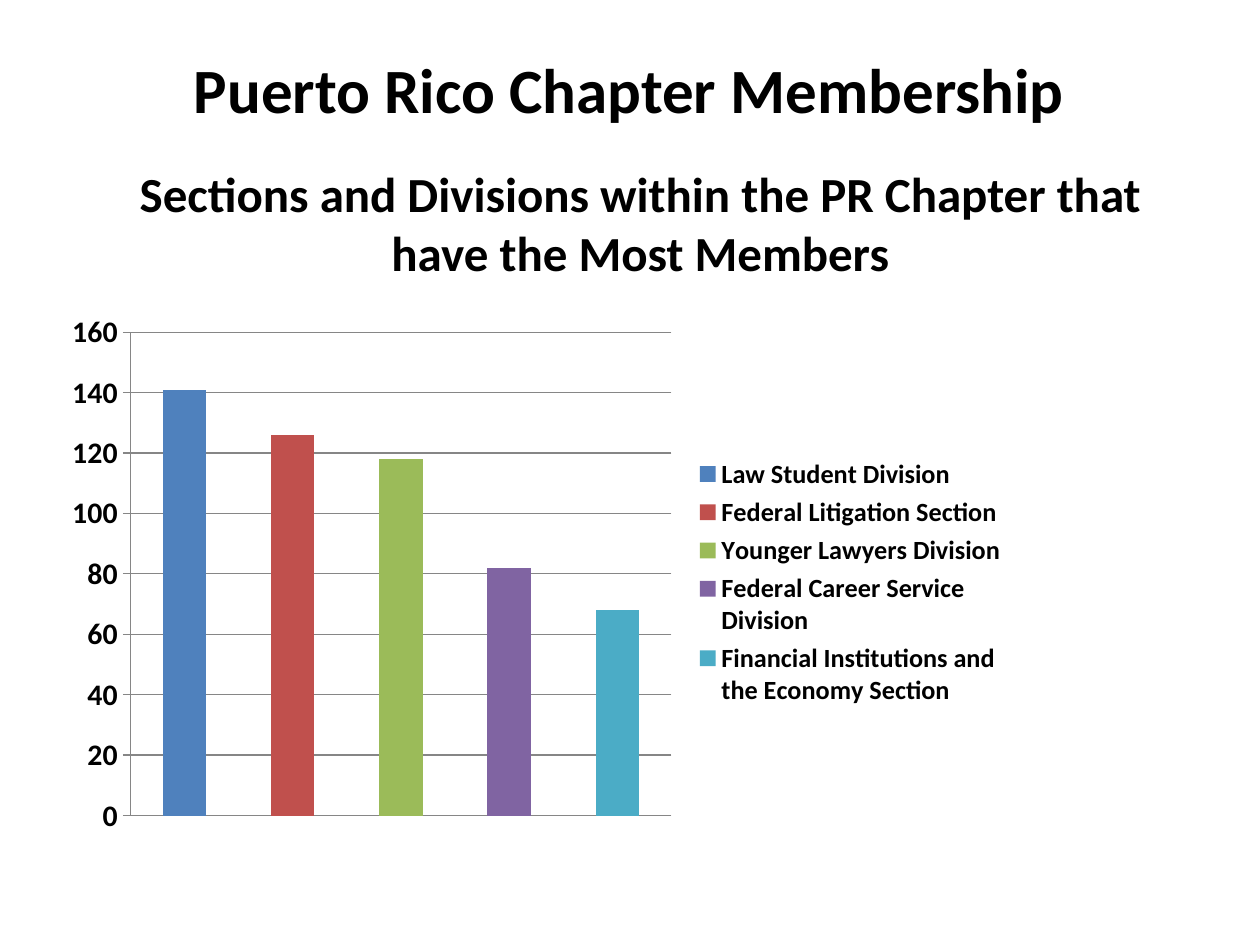
import lxml.etree
import pptx
import pptx.chart.data
import pptx.dml.color
import pptx.enum.chart
import pptx.enum.text
import pptx.util

Cm = pptx.util.Cm
CHART_NS = "http://schemas.openxmlformats.org/drawingml/2006/chart"
MEMBERS = {
    "Law Student Division": (141, "4F81BD"),
    "Federal Litigation Section": (126, "C0504D"),
    "Younger Lawyers Division": (118, "9BBB59"),
    "Federal Career Service Division": (82, "8064A2"),
    "Financial Institutions and the Economy Section": (68, "4BACC6"),
}


def color(hex_value):
    """Return the RGB colour for a hex string."""
    return pptx.dml.color.RGBColor.from_string(hex_value)


def apply(target, formats):
    """Set each attribute in the dict on the target."""
    for name, value in formats.items():
        setattr(target, name, value)


def format_font(font, size, bold):
    """Give a font the slide's typeface, colour, size and weight."""
    apply(font, {"name": "Calibri", "size": pptx.util.Pt(size), "bold": bold})
    font.color.rgb = color("000000")


def write_heading(heading, box, text, size):
    """Place a centred bold heading in its box."""
    apply(heading, dict(zip(("left", "top", "width", "height"), box)))
    apply(heading.text_frame, {
        "text": text,
        "word_wrap": True,
        "auto_size": pptx.enum.text.MSO_AUTO_SIZE.NONE,
        "vertical_anchor": pptx.enum.text.MSO_ANCHOR.TOP,
    })
    paragraph = heading.text_frame.paragraphs[0]
    paragraph.alignment = pptx.enum.text.PP_ALIGN.CENTER
    format_font(paragraph.runs[0].font, size, True)


def set_layout(parent, index, fractions, inner=False):
    """Fix a chart part at fractions of the chart area."""
    tag = f"{{{CHART_NS}}}"
    for old in parent.findall(tag + "layout"):
        parent.remove(old)
    layout = lxml.etree.Element(tag + "layout")
    manual = lxml.etree.SubElement(layout, tag + "manualLayout")
    settings = {"layoutTarget": "inner"} if inner else {}
    settings.update({"xMode": "edge", "yMode": "edge"})
    settings.update(zip("xywh", fractions))
    for name, value in settings.items():
        lxml.etree.SubElement(manual, tag + name, val=str(value))
    parent.insert(index, layout)


def add_member_chart(slide, box):
    """Add the column chart of members with its legend."""
    chart_data = pptx.chart.data.CategoryChartData()
    chart_data.categories = list(MEMBERS)
    chart_data.add_series("Series 1", [count for count, _ in MEMBERS.values()])
    chart = slide.shapes.add_chart(
        pptx.enum.chart.XL_CHART_TYPE.COLUMN_CLUSTERED, *box, chart_data
    ).chart
    apply(chart, {"has_title": False, "has_legend": True})
    format_font(chart.font, 10, False)

    columns = chart.plots[0]
    apply(columns, {"gap_width": 150, "vary_by_categories": True})
    for index, (_, fill_color) in enumerate(MEMBERS.values()):
        fill = columns.series[0].points[index].format.fill
        fill.solid()
        fill.fore_color.rgb = color(fill_color)

    chart.category_axis.visible = False
    count_axis = chart.value_axis
    apply(count_axis, {
        "minimum_scale": 0,
        "maximum_scale": 160,
        "major_unit": 20,
        "has_major_gridlines": True,
        "major_tick_mark": pptx.enum.chart.XL_TICK_MARK.OUTSIDE,
    })
    format_font(count_axis.tick_labels.font, 17, True)
    for line in (count_axis.format.line, count_axis.major_gridlines.format.line):
        line.color.rgb = color("868686")
        line.width = pptx.util.Pt(0.75)

    apply(chart.legend, {
        "position": pptx.enum.chart.XL_LEGEND_POSITION.RIGHT,
        "include_in_layout": False,
    })
    format_font(chart.legend.font, 15, True)
    chart_area = chart._chartSpace.chart
    set_layout(chart_area.plotArea, 0, (0.08, 0.05, 0.56, 0.89), inner=True)
    set_layout(chart_area.find(f"{{{CHART_NS}}}legend"), 1, (0.66, 0.27, 0.33, 0.48))


def build_membership_slide(deck):
    """Build the chapter membership slide."""
    slide = deck.slides.add_slide(deck.slide_layouts[5])
    write_heading(
        slide.shapes.title, (Cm(1.47), Cm(0.89), Cm(22.43), Cm(1.8)),
        "Puerto Rico Chapter Membership", 36,
    )
    subtitle_box = (Cm(2.54), Cm(3.18), Cm(20.73), Cm(2.64))
    write_heading(
        slide.shapes.add_textbox(*subtitle_box), subtitle_box,
        "Sections and Divisions within the PR Chapter that have the Most Members", 28,
    )
    add_member_chart(slide, (Cm(1.07), Cm(6.15), Cm(19.48), Cm(10.95)))


def main():
    """Create and save the deck."""
    deck = pptx.Presentation()
    apply(deck, {"slide_width": Cm(25.4), "slide_height": Cm(19.05)})
    build_membership_slide(deck)
    deck.save("out.pptx")


if __name__ == "__main__":
    main()
